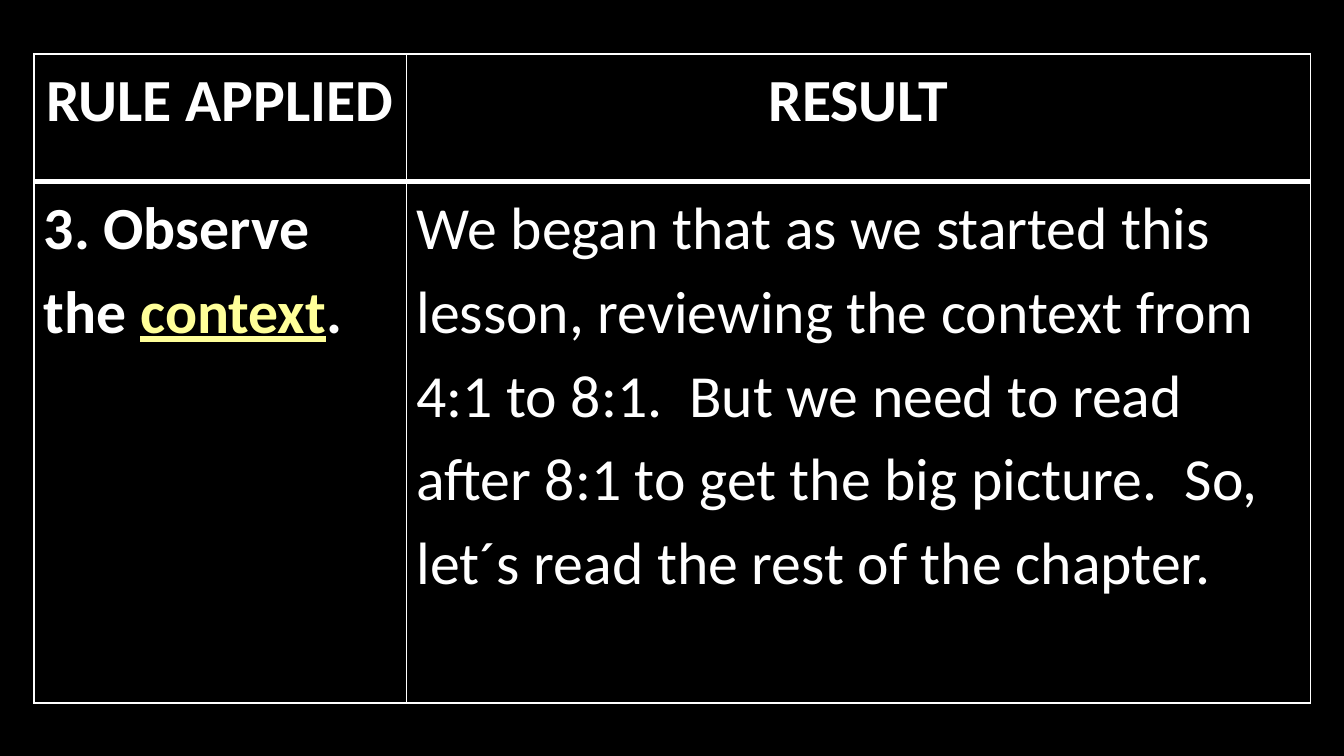
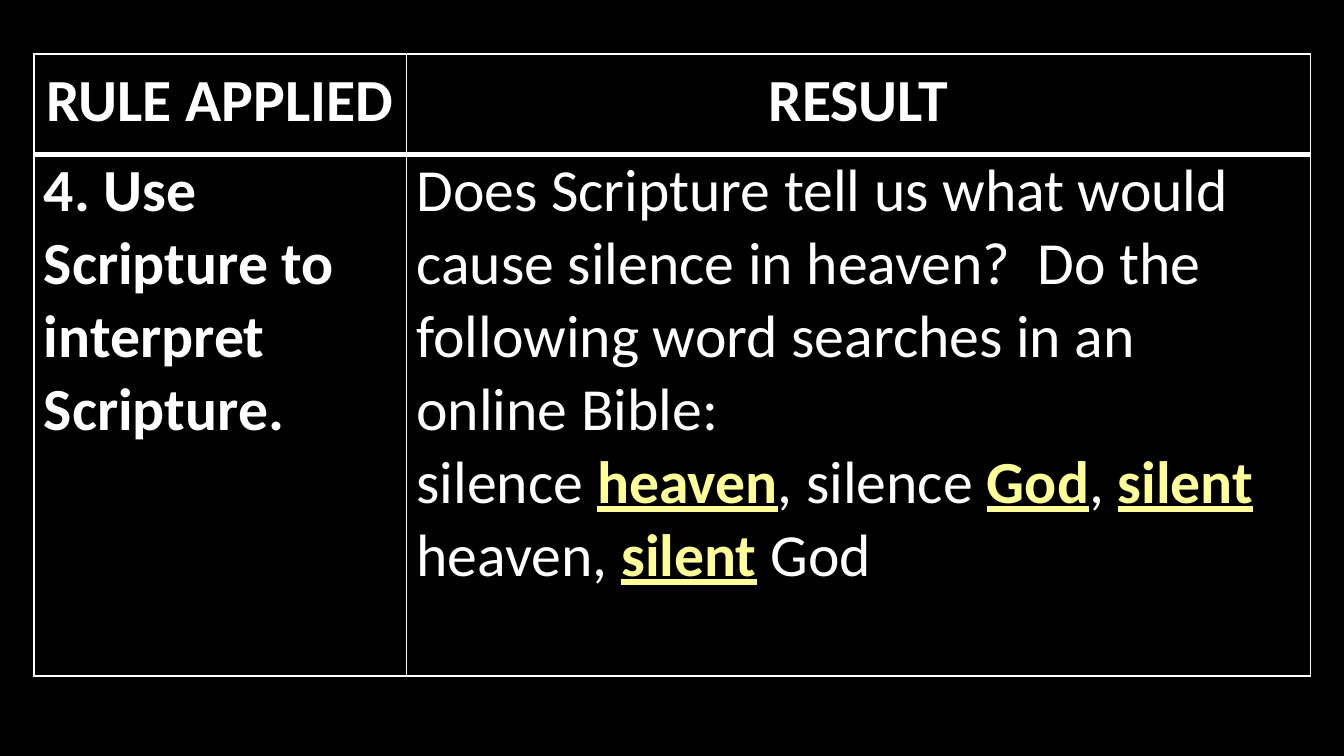
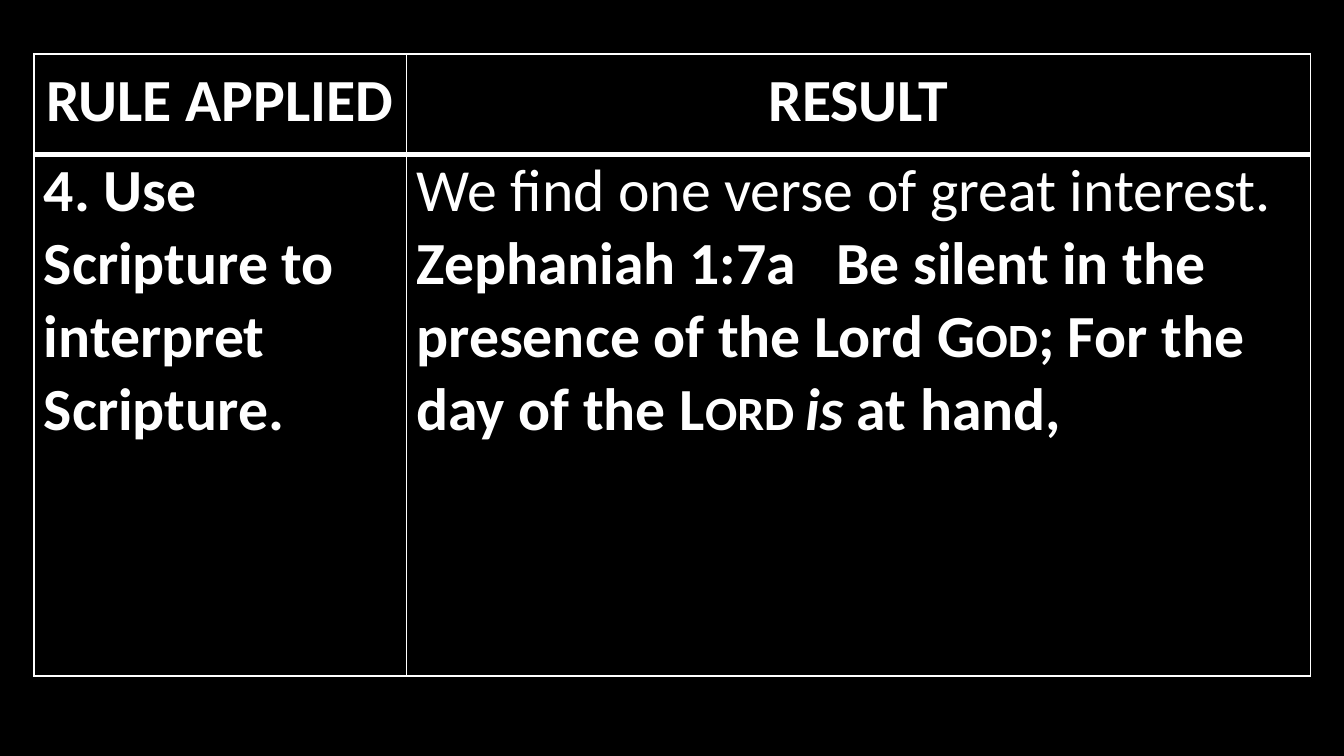
import pptx
import pptx.dml.color
import pptx.enum.text
import pptx.util
import lxml.etree
import pptx.oxml.ns

Cm = pptx.util.Cm
Pt = pptx.util.Pt
WHITE, BLACK, YELLOW = "FFFFFF", "000000", "FFFF99"
KEY = {"color": YELLOW, "bold": True, "under": True}
SMALL = {"small": True}
HEADS = ["RULE APPLIED", "RESULT"]


def rgb(code):
    return pptx.dml.color.RGBColor.from_string(code)


class Deck:
    font, size = "Calibri", 32
    left, top = 0.64, 1.02
    cols = [7.04, 17.09]

    def __init__(self):
        self.prs = pptx.Presentation()
        self.prs.slide_width, self.prs.slide_height = Cm(25.4), Cm(14.29)
        self.slide = None

    def add_slide(self):
        self.slide = self.prs.slides.add_slide(self.prs.slide_layouts[6])
        fill = self.slide.background.fill
        fill.solid()
        fill.fore_color.rgb = rgb(BLACK)

    def border(self, cell, side, width):
        """Draw one edge of a cell; side is L, R, T or B."""
        edge = lxml.etree.SubElement(
            cell._tc.get_or_add_tcPr(), pptx.oxml.ns.qn("a:ln" + side),
            w=str(Pt(width)))
        fill = lxml.etree.SubElement(edge, pptx.oxml.ns.qn("a:solidFill"))
        lxml.etree.SubElement(fill, pptx.oxml.ns.qn("a:srgbClr"), val=WHITE)

    def add_run(self, para, text, color=None, bold=None, under=None,
                italic=None, small=False):
        run = para.add_run()
        run.text = text
        run.font.bold, run.font.italic = bold, italic
        run.font.underline = under
        if color:
            run.font.color.rgb = rgb(color)
        if small:
            run._r.get_or_add_rPr().set("cap", "small")

    def add_para(self, para, parts, bold, space, center):
        """Fill a paragraph from plain strings and (text, style) pairs."""
        para.line_spacing = space
        align = pptx.enum.text.PP_ALIGN
        para.alignment = align.CENTER if center else align.LEFT
        font = para.font
        font.name, font.size, font.bold = self.font, Pt(self.size), bold
        font.color.rgb = rgb(WHITE)
        for part in parts:
            text, style = (part, {}) if isinstance(part, str) else part
            self.add_run(para, text, **style)

    def fill_cell(self, cell, paras, space, head=False):
        """Fill a cell from (bold, parts) paragraphs."""
        cell.margin_left = cell.margin_right = Cm(0.19)
        cell.margin_top = cell.margin_bottom = 0
        for side in "LRTB":
            self.border(cell, side, 3 if head and side == "B" else 1)
        cell.fill.background()
        frame = cell.text_frame
        for i, (bold, parts) in enumerate(paras):
            para = frame.add_paragraph() if i else frame.paragraphs[0]
            self.add_para(para, parts, bold, space, head)

    def add_table(self, rule, result, high=1.9, space=1.0):
        rows = [high, 9.86]
        table = self.slide.shapes.add_table(
            2, 2, Cm(self.left), Cm(self.top),
            Cm(sum(self.cols)), Cm(sum(rows))).table
        table.first_row = table.horz_banding = False
        for row, height in zip(table.rows, rows):
            row.height = Cm(height)
        for i, body in enumerate([[(True, rule)], result]):
            table.columns[i].width = Cm(self.cols[i])
            self.fill_cell(table.cell(0, i), [(True, [HEADS[i]])], 1.15, True)
            self.fill_cell(table.cell(1, i), body, space)


def main():
    deck = Deck()

    deck.add_slide()
    deck.add_table(
        ["3. Observe the ", ("context", KEY), "."],
        [(False, ["We began that as we started this lesson, reviewing the "
                  "context from 4:1 to 8:1.  But we need to read after 8:1 "
                  "to get the big picture.  So, let´s read the rest of the "
                  "chapter."])],
        high=2.41, space=1.15)

    rule = ["4. Use Scripture to interpret Scripture."]
    search = [
        (False, ["Does Scripture tell us what would cause silence in heaven?  "
                 "Do the following word searches in an online Bible:"]),
        (False, ["silence ", ("heaven", KEY), ", silence ", ("God", KEY),
                 ", ", ("silent", KEY), " heaven, ", ("silent", KEY),
                 " God"])]
    verse = [
        (False, ["We find one verse of great interest."]),
        (True, ["Zephaniah 1:7a   Be silent in the presence of the Lord ",
                ("God", SMALL), "; For the day of the ", ("Lord ", SMALL),
                ("is", {"italic": True}), " at hand,"])]
    for result in (search, verse):
        deck.add_slide()
        deck.add_table(rule, result)

    deck.prs.save("out.pptx")


if __name__ == "__main__":
    main()
